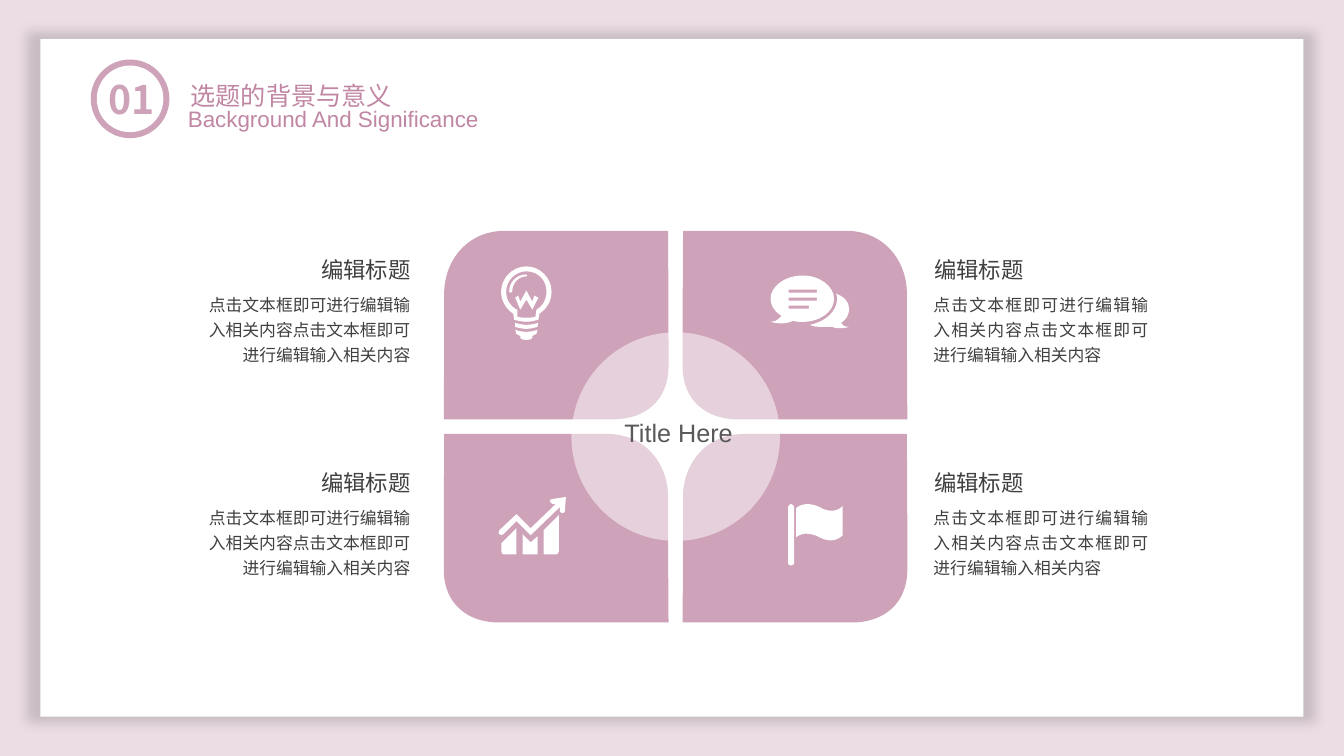
import pptx
import pptx.util
import pptx.dml.color
import pptx.enum.shapes
import pptx.enum.text
import pptx.oxml
import pptx.oxml.ns
import lxml.etree

Pt = pptx.util.Pt
RGBColor = pptx.dml.color.RGBColor
SHAPE = pptx.enum.shapes.MSO_SHAPE
ALIGN = pptx.enum.text.PP_ALIGN
qn = pptx.oxml.ns.qn

PALE_PINK = RGBColor(0xEC, 0xDC, 0xE4)
PINK = RGBColor(0xCE, 0xA2, 0xB8)
DEEP_PINK = RGBColor(0xC0, 0x86, 0xA3)
WHITE = RGBColor(0xFF, 0xFF, 0xFF)
DARK_GREY = RGBColor(0x40, 0x40, 0x40)
MID_GREY = RGBColor(0x59, 0x59, 0x59)
CHINESE = "Noto Sans CJK SC"
LATIN = "Arial"
UNIT = 0.72  # points per step of the outline grid

presentation = pptx.Presentation()
presentation.slide_width = Pt(960)
presentation.slide_height = Pt(540)
slide = presentation.slides.add_slide(presentation.slide_layouts[6])
slide.background.fill.solid()
slide.background.fill.fore_color.rgb = PALE_PINK


def add_text(box, text, size, font, colour, align=ALIGN.LEFT, spacing=None, bold=False, wrap=True, holder=None):
    holder = holder or slide.shapes.add_textbox(*[Pt(v) for v in box])
    frame = holder.text_frame
    frame.word_wrap = wrap
    frame.text = text
    paragraph = frame.paragraphs[0]
    paragraph.alignment = align
    paragraph.line_spacing = spacing
    run = paragraph.runs[0]
    run.font.size = Pt(size)
    run.font.bold = bold
    run.font.name = font
    run.font.color.rgb = colour
    lxml.etree.SubElement(run._r.get_or_add_rPr(), qn("a:ea"), typeface=font)


def add_outline(left, top, contours, colour, direction=1):
    """Contours hold points and cubic curves (two handles and an end point)."""
    builder = None
    segment_sizes = []
    for start, *segments in contours:
        numbers = [number for segment in [start, *segments] for number in segment]
        placed = [(Pt(left + direction * x * UNIT), Pt(top + y * UNIT))
                  for x, y in zip(numbers[::2], numbers[1::2])]
        if builder is None:
            builder = slide.shapes.build_freeform(*placed[0])
        else:
            builder.move_to(*placed[0])
        builder.add_line_segments(placed[1:], close=True)
        segment_sizes += [len(segment) // 2 for segment in segments]
    outline = builder.convert_to_shape()
    # Join the three points of each curve into one cubic segment
    steps = iter(list(outline.element.spPr.iter(qn("a:lnTo"))))
    for size in segment_sizes:
        segment = next(steps)
        if size == 3:
            segment.tag = qn("a:cubicBezTo")
            for extra in (next(steps), next(steps)):
                segment.append(extra[0])
                extra.getparent().remove(extra)
    outline.shadow.inherit = False
    outline.fill.solid()
    outline.fill.fore_color.rgb = colour
    outline.line.fill.background()


# White card, number ring and translucent centre disc
plain_shapes = []
for kind, box, colour in [
    (SHAPE.RECTANGLE, (28.8, 28, 902.2, 484), WHITE),
    (SHAPE.OVAL, (64.8, 42.5, 56.2, 56.2), PINK),
    (SHAPE.OVAL, (69.1, 46.8, 47.6, 47.6), WHITE),
    (SHAPE.OVAL, (408.2, 237.4, 149, 149), WHITE),
    (SHAPE.SNIP_1_RECTANGLE, (38.2, 71.6, 395.3, 26.6), None),
]:
    shape = slide.shapes.add_shape(kind, *[Pt(v) for v in box])
    shape.shadow.inherit = False
    shape.line.fill.background()
    if colour is None:
        shape.fill.background()
    else:
        shape.fill.solid()
        shape.fill.fore_color.rgb = colour
    plain_shapes.append(shape)
card, ring, ring_hole, disc, subtitle = plain_shapes

card.element.spPr.find(qn("a:effectLst")).append(pptx.oxml.parse_xml(
    '<a:outerShdw xmlns:a="http://schemas.openxmlformats.org/drawingml/2006/main"'
    f' blurRad="{Pt(8)}" dist="0" dir="0" sx="102000" sy="102000" algn="ctr" rotWithShape="0">'
    '<a:srgbClr val="808080"><a:alpha val="32000"/></a:srgbClr></a:outerShdw>'))
disc_colour = disc.element.spPr.find(qn("a:solidFill")).find(qn("a:srgbClr"))
lxml.etree.SubElement(disc_colour, qn("a:alpha"), val="50000")

# Heading
add_text((68.4, 50.4, 51.8, 41), "01", 28, CHINESE, PINK, ALIGN.CENTER, bold=True)
add_text((129, 32.2, 159.8, 44.6), "选题的背景与意义", 18, CHINESE, DEEP_PINK, spacing=2, wrap=False)
subtitle.adjustments[0] = 0
add_text(None, " Background And Significance", 16, LATIN, DEEP_PINK, ALIGN.CENTER, holder=subtitle)

# Four petals on a two by two grid; those off the diagonal are mirrored
petal = [[(171, 187), (86, 187, 0, 187, 0, 187), (0, 187, 0.5, 123, 0.5, 59), (2, 28, 24, 0, 61, 0),
          (142, 0, 222.5, 0, 222.5, 0), (222.5, 0, 223, 67, 223, 134), (223, 170, 198, 186, 171, 187)]]
for row in range(2):
    for column in range(2):
        left, top = 317 + column * 170.6, 164.9 + row * 145.1
        if row == column:
            add_outline(left, top, petal, PINK)
        else:
            add_outline(left + 223 * UNIT, top, petal, PINK, direction=-1)

# The disc lies over the petals
slide.shapes._spTree.append(disc.element)
add_text((400.3, 294.5, 164.2, 28.8), " Title Here", 18, LATIN, MID_GREY, ALIGN.CENTER)

# Captions on both sides
body = "点击文本框即可进行编辑输入相关内容" * 2
for title_left, body_left, title_align, body_align in [
    (660.3, 659.7, ALIGN.LEFT, ALIGN.JUSTIFY),
    (193, 132.5, ALIGN.RIGHT, ALIGN.RIGHT),
]:
    for title_top in (179.3, 331.6):
        add_text((body_left, title_top + 23.75, 167.8, 61.9), body, 12, CHINESE, DARK_GREY, body_align, 1.25)
        add_text((title_left, title_top, 107.3, 26.6), "编辑标题", 16, CHINESE, DARK_GREY, title_align)

# Icons
bulb = [
    [(14, 63), (15, 67), (19, 69), (19, 71), (19, 71, 20, 73, 25, 73), (30, 73, 31, 71, 31, 71),
     (31, 69), (35, 67), (36, 63), (33, 64, 29, 65, 25, 65), (21, 65, 17, 64, 14, 63)],
    [(14, 56), (14, 60), (17, 61, 21, 62, 25, 62), (29, 62, 33, 61, 36, 60), (37, 56),
     (33, 57, 30, 58, 25, 58), (21, 58, 17, 57, 14, 56)],
    [(31, 35), (25, 24), (19, 35), (17, 29), (14, 31), (19, 43), (25, 33), (31, 43), (37, 31), (33, 29)],
    [(25, 10), (26, 10, 26, 10, 26, 9), (26, 9, 26, 8, 25, 8), (16, 8, 8, 15, 8, 25),
     (8, 26, 9, 26, 9, 26), (10, 26, 11, 26, 11, 25), (11, 17, 17, 10, 25, 10)],
    [(25, 0), (11, 0, 0, 12, 0, 25), (0, 35, 5, 42, 12, 47), (13, 53), (17, 54, 21, 55, 25, 55),
     (30, 55, 33, 54, 37, 53), (38, 47), (45, 42, 50, 35, 50, 25), (50, 12, 39, 0, 25, 0)],
    [(35, 43), (34, 50), (34, 50, 31, 51, 25, 51), (19, 51, 16, 50, 16, 50), (16, 43),
     (9, 40, 5, 33, 5, 25), (5, 14, 14, 5, 25, 5), (37, 5, 45, 14, 45, 25), (45, 33, 41, 40, 35, 43)],
]
growth_chart = [
    [(3, 54), (3, 56, 4, 57, 6, 57), (18, 57), (18, 31), (3, 46)],
    [(24, 37), (24, 57), (39, 57), (39, 39), (32, 45)],
    [(54, 2), (52, 2, 51, 3, 51, 4), (51, 5, 53, 7, 54, 7), (57, 7), (32, 31), (18, 17), (1, 33),
     (0, 35, 0, 37, 1, 37), (2, 38, 4, 38, 5, 37), (18, 24), (32, 38), (61, 10), (61, 13),
     (60, 14, 62, 16, 63, 16), (64, 16), (65, 16, 66, 15, 66, 14), (67, 0)],
    [(45, 33), (45, 57), (57, 57), (58, 57, 60, 56, 60, 54), (60, 18), (47, 31)],
]
speech_bubbles = [
    [(63, 23), (63, 11, 49, 0, 32, 0), (14, 0, 0, 11, 0, 23), (0, 30, 4, 36, 11, 40),
     (9, 42, 6, 46, 0, 46), (0, 46, 13, 50, 22, 45), (25, 46, 28, 46, 32, 46), (49, 46, 63, 36, 63, 23)],
    [(70, 47), (75, 44, 78, 39, 78, 33), (78, 26, 73, 21, 65, 18), (66, 19, 66, 21, 66, 23),
     (66, 36, 54, 46, 39, 49), (43, 51, 47, 51, 53, 51), (56, 51, 58, 51, 61, 51),
     (68, 54, 78, 51, 78, 51), (73, 51, 71, 49, 70, 47)],
]
for right, bottom in [(46, 17), (46, 25), (38, 33)]:
    speech_bubbles.append([(right, bottom), (18, bottom), (18, bottom - 3), (right, bottom - 3)])
flag = [
    [(31, 7), (16, 0, 8, 8, 8, 8), (8, 37), (8, 37, 16, 29, 31, 37), (46, 45, 54, 35, 54, 35),
     (54, 6), (54, 6, 46, 16, 31, 7)],
    [(3, 4), (1, 4, 0, 6, 0, 7), (0, 63), (0, 64, 1, 65, 3, 65), (4, 65, 6, 64, 6, 63),
     (6, 7), (6, 6, 4, 4, 3, 4)],
]
for left, top, icon in [
    (358, 190.3, bulb),
    (356, 355, growth_chart),
    (550.4, 196.8, speech_bubbles),
    (563, 357.1, flag),
]:
    add_outline(left, top, icon, WHITE)

presentation.save("out.pptx")
